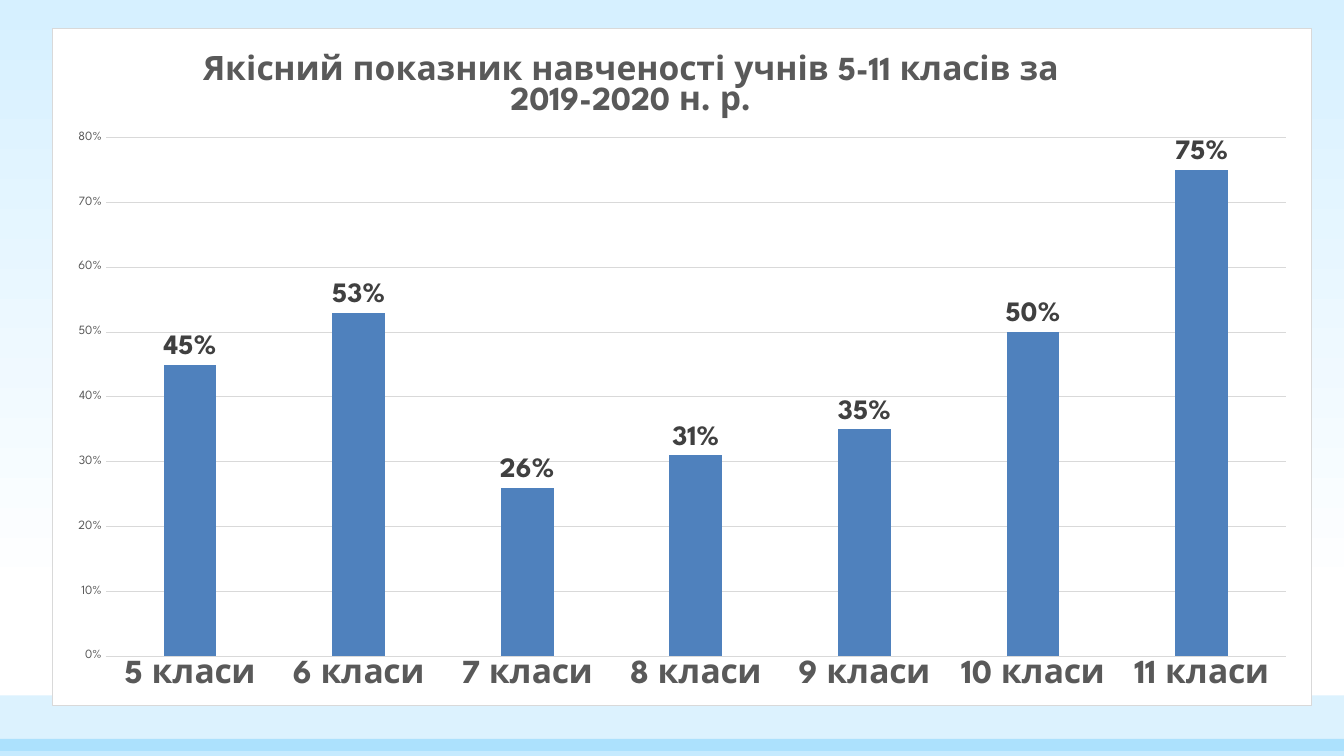
from dataclasses import dataclass

from lxml import etree
from pptx import Presentation
from pptx.chart.chart import Chart
from pptx.chart.data import CategoryChartData
from pptx.dml.color import RGBColor
from pptx.enum.chart import XL_CHART_TYPE, XL_LABEL_POSITION, XL_TICK_MARK
from pptx.enum.shapes import MSO_SHAPE
from pptx.oxml import parse_xml
from pptx.oxml.ns import nsdecls, qn
from pptx.slide import Slide
from pptx.text.text import Font
from pptx.util import Inches, Pt

COLUMNS = XL_CHART_TYPE.COLUMN_CLUSTERED
OUTSIDE_END = XL_LABEL_POSITION.OUTSIDE_END
NO_TICK = XL_TICK_MARK.NONE
RECTANGLE = MSO_SHAPE.RECTANGLE
PAGE_WIDTH = Inches(13.33)
PAGE_HEIGHT = Inches(7.5)


@dataclass(frozen=True)
class Theme:
    font: str = "League Spartan"
    sky: str = "D6F0FF"
    white: str = "FFFFFF"
    band: str = "31B6FD"
    column: str = "4F81BD"
    text: str = "595959"
    label: str = "404040"
    rule: str = "D9D9D9"
    title_size: float = 24
    category_size: float = 24
    label_size: float = 20
    scale_size: float = 9
    rule_width: float = 0.75


@dataclass(frozen=True)
class Area:
    left: float
    top: float
    width: float
    height: float

    def on_page(self) -> tuple[int, int, int, int]:
        return (
            int(self.left * PAGE_WIDTH),
            int(self.top * PAGE_HEIGHT),
            int(self.width * PAGE_WIDTH),
            int(self.height * PAGE_HEIGHT),
        )


@dataclass(frozen=True)
class Band:
    area: Area
    opacity: int


@dataclass(frozen=True)
class Result:
    grade: int
    share: float


THEME = Theme()
BANDS = [
    Band(Area(0, 0.92, 1, 0.0733), 17),
    Band(Area(0, 0.9773, 1, 0.0227), 28),
]
CHART_AREA = Area(0.039, 0.0373, 0.937, 0.896)
PLOT_AREA = Area(0.042, 0.161, 0.938, 0.767)
TITLE_AREA = Area(0.117, 0.035, 0.68, 0.1)
TITLE_LINES = ["Якісний показник навченості учнів 5-11 класів за", "2019-2020 н. р."]
RESULTS = [
    Result(5, 0.45),
    Result(6, 0.53),
    Result(7, 0.26),
    Result(8, 0.31),
    Result(9, 0.35),
    Result(10, 0.5),
    Result(11, 0.75),
]


def color(value: str) -> RGBColor:
    return RGBColor.from_string(value)


def style_font(font: Font, size: float, tone: str, bold: bool = False) -> None:
    font.name = THEME.font
    font.size = Pt(size)
    font.bold = bold
    font.color.rgb = color(tone)


def paint_background(page: Slide) -> None:
    fill = page.background.fill
    fill.gradient()
    fill.gradient_angle = 270
    for stop, tone, position in zip(fill.gradient_stops, (THEME.sky, THEME.white), (0, 0.79)):
        stop.color.rgb = color(tone)
        stop.position = position


def draw_band(page: Slide, band: Band) -> None:
    box = page.shapes.add_shape(RECTANGLE, *band.area.on_page())
    box.shadow.inherit = False
    box.line.fill.background()
    box.fill.solid()
    box.fill.fore_color.rgb = color(THEME.band)
    tone = box.fill._xPr.find(qn("a:solidFill"))[0]
    etree.SubElement(tone, qn("a:alpha")).set("val", str(band.opacity * 1000))


def set_layout(parent: etree._Element, index: int, area: Area, inner: bool = False) -> None:
    for old in parent.findall(qn("c:layout")):
        parent.remove(old)
    layout = etree.Element(qn("c:layout"))
    manual = etree.SubElement(layout, qn("c:manualLayout"))
    settings = [("layoutTarget", "inner")] if inner else []
    settings += [("xMode", "edge"), ("yMode", "edge"), ("x", area.left), ("y", area.top)]
    if inner:
        settings += [("w", area.width), ("h", area.height)]
    for name, value in settings:
        etree.SubElement(manual, qn(f"c:{name}")).set("val", str(value))
    parent.insert(index, layout)


def frame_chart(chart: Chart) -> None:
    frame = parse_xml(
        f'<c:spPr {nsdecls("c", "a")}>'
        f'<a:solidFill><a:srgbClr val="{THEME.white}"/></a:solidFill>'
        f'<a:ln w="{Pt(THEME.rule_width)}"><a:solidFill>'
        f'<a:srgbClr val="{THEME.rule}"/></a:solidFill></a:ln></c:spPr>'
    )
    chart.element.find(qn("c:chart")).addnext(frame)


def write_title(chart: Chart) -> None:
    title = chart.chart_title
    text = title.text_frame
    for number, line in enumerate(TITLE_LINES):
        para = text.add_paragraph() if number else text.paragraphs[0]
        span = para.add_run()
        span.text = line
        style_font(span.font, THEME.title_size, THEME.text, True)
    set_layout(title._element, 1, TITLE_AREA)


def style_axes(chart: Chart) -> None:
    grades, scale = chart.category_axis, chart.value_axis
    for axis in (grades, scale):
        axis.major_tick_mark = NO_TICK
        axis.minor_tick_mark = NO_TICK
    style_font(grades.tick_labels.font, THEME.category_size, THEME.text, True)
    style_font(scale.tick_labels.font, THEME.scale_size, THEME.text)
    scale.minimum_scale, scale.maximum_scale, scale.major_unit = 0, 0.8, 0.1
    scale.tick_labels.number_format = "0%"
    scale.tick_labels.number_format_is_linked = False
    scale.format.line.fill.background()
    for line in (grades.format.line, scale.major_gridlines.format.line):
        line.color.rgb = color(THEME.rule)
        line.width = Pt(THEME.rule_width)


def style_columns(chart: Chart) -> None:
    plot = chart.plots[0]
    plot.gap_width = 219
    plot.vary_by_categories = False
    columns = plot.series[0].format.fill
    columns.solid()
    columns.fore_color.rgb = color(THEME.column)
    labels = plot.series[0].data_labels
    labels.show_value = True
    labels.position = OUTSIDE_END
    labels.number_format = "0%"
    labels.number_format_is_linked = False
    style_font(labels.font, THEME.label_size, THEME.label, True)


def draw_chart(page: Slide) -> None:
    table = CategoryChartData(number_format="0%")
    table.categories = [f"{result.grade} класи" for result in RESULTS]
    table.add_series("Series 1", [result.share for result in RESULTS])
    chart = page.shapes.add_chart(COLUMNS, *CHART_AREA.on_page(), table).chart
    chart.has_legend = False
    chart.font.name = THEME.font
    frame_chart(chart)
    write_title(chart)
    style_axes(chart)
    style_columns(chart)
    set_layout(chart.element.find(f".//{qn('c:plotArea')}"), 0, PLOT_AREA, True)


def main() -> None:
    deck = Presentation()
    deck.slide_width, deck.slide_height = PAGE_WIDTH, PAGE_HEIGHT
    page = deck.slides.add_slide(deck.slide_layouts[6])
    paint_background(page)
    for band in BANDS:
        draw_band(page, band)
    draw_chart(page)
    deck.save("out.pptx")


if __name__ == "__main__":
    main()
